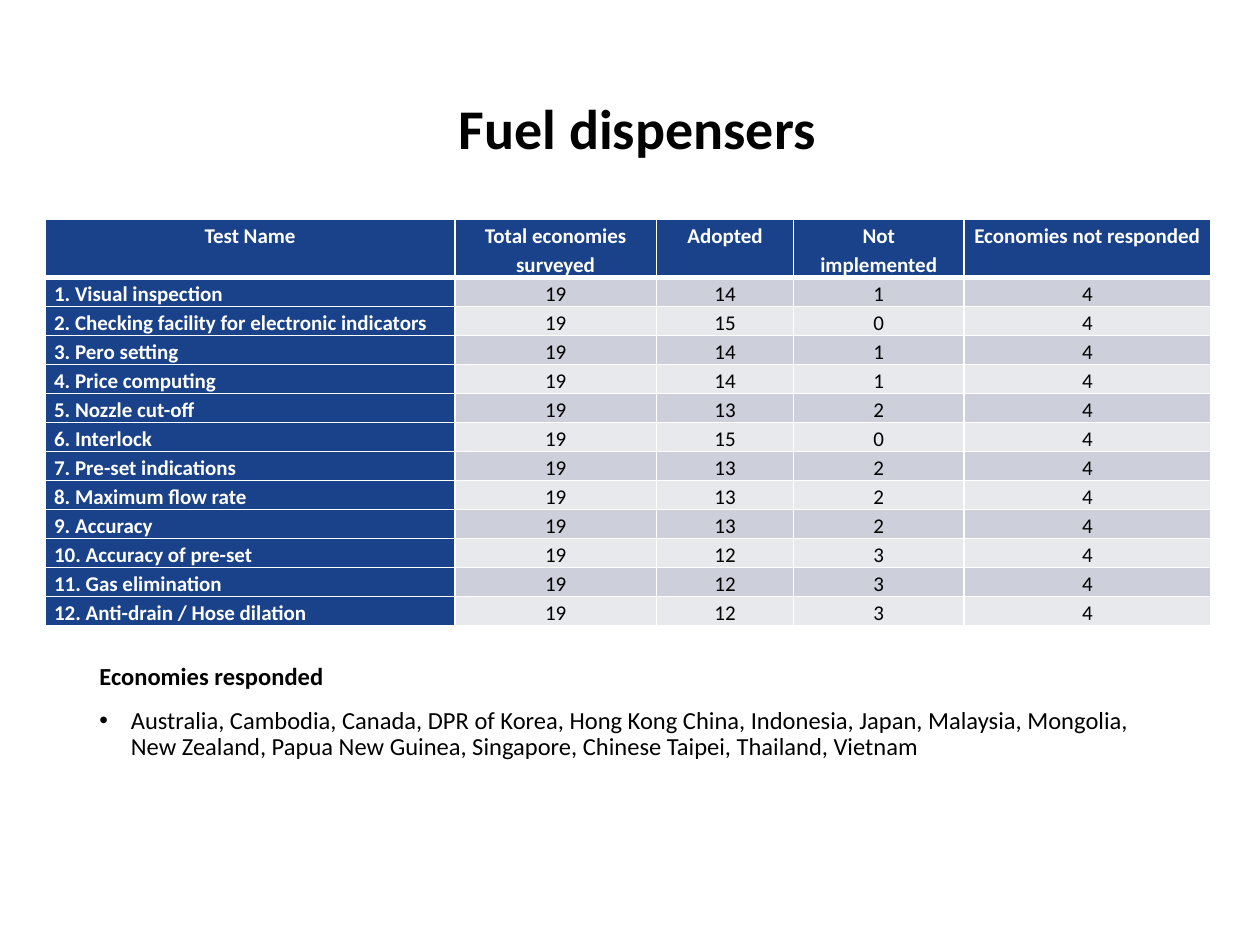
from dataclasses import dataclass

from lxml import etree
from pptx import Presentation
from pptx.dml.color import RGBColor
from pptx.enum.text import MSO_ANCHOR, PP_ALIGN
from pptx.oxml.ns import qn
from pptx.util import Inches, Pt


@dataclass(frozen=True)
class Theme:
    font: str = "Calibri"
    black: str = "000000"
    white: str = "FFFFFF"
    blue: str = "1A428A"
    bands: tuple = ("CDCFDA", "E8E9ED")
    title_size: int = 32
    body_size: int = 14
    table_size: int = 12
    thin_line: int = 1
    thick_line: int = 3


THEME = Theme()

HEADERS = ["Test Name", "Total economies surveyed", "Adopted",
           "Not implemented", "Economies not responded"]
COLUMN_WIDTHS = [3.25, 1.6, 1.09, 1.35, 1.96]
HEADER_HEIGHT, ROW_HEIGHT = 0.41, 0.2
SURVEYED, NOT_RESPONDED = 19, 4

# Test name, adopted, not implemented
TESTS = [
    ("Visual inspection", 14, 1),
    ("Checking facility for electronic indicators", 15, 0),
    ("Pero setting", 14, 1),
    ("Price computing", 14, 1),
    ("Nozzle cut-off", 13, 2),
    ("Interlock", 15, 0),
    ("Pre-set indications", 13, 2),
    ("Maximum flow rate", 13, 2),
    ("Accuracy", 13, 2),
    ("Accuracy of pre-set", 12, 3),
    ("Gas elimination", 12, 3),
    ("Anti-drain / Hose dilation", 12, 3),
]
ECONOMIES = ("Australia, Cambodia, Canada, DPR of Korea, Hong Kong China, "
             "Indonesia, Japan, Malaysia, Mongolia, New Zealand, "
             "Papua New Guinea, Singapore, Chinese Taipei, Thailand, Vietnam")


def style(paragraph, size, color=THEME.black, bold=False, spacing=0.9):
    paragraph.line_spacing = spacing
    font = paragraph.font
    font.name, font.size, font.bold = THEME.font, Pt(size), bold
    font.color.rgb = RGBColor.from_string(color)


def add_text_frame(slide, box):
    frame = slide.shapes.add_textbox(*map(Inches, box)).text_frame
    frame.word_wrap = True
    return frame


def add_title(slide, box):
    frame = add_text_frame(slide, box)
    frame.vertical_anchor = MSO_ANCHOR.MIDDLE
    paragraph = frame.paragraphs[0]
    paragraph.text = "Fuel dispensers"
    paragraph.alignment = PP_ALIGN.CENTER
    style(paragraph, THEME.title_size, bold=True)


def set_borders(cell, top, bottom):
    properties = cell._tc.get_or_add_tcPr()
    widths = {"L": THEME.thin_line, "R": THEME.thin_line, "T": top, "B": bottom}
    for side, width in widths.items():
        line = etree.SubElement(properties, qn(f"a:ln{side}"), w=str(Pt(width)))
        fill = etree.SubElement(line, qn("a:solidFill"))
        etree.SubElement(fill, qn("a:srgbClr"), val=THEME.white)


def fill_cell(cell, text, row, column):
    strong = row == 0 or column == 0
    set_borders(cell,
                top=THEME.thick_line if row == 1 else THEME.thin_line,
                bottom=THEME.thick_line if row == 0 else THEME.thin_line)
    cell.fill.solid()
    color = THEME.blue if strong else THEME.bands[(row - 1) % 2]
    cell.fill.fore_color.rgb = RGBColor.from_string(color)
    cell.margin_left = cell.margin_right = Inches(0.07)
    cell.margin_top = cell.margin_bottom = 0

    paragraph = cell.text_frame.paragraphs[0]
    paragraph.text = str(text)
    name_cell = column == 0 and row > 0
    paragraph.alignment = PP_ALIGN.LEFT if name_cell else PP_ALIGN.CENTER
    style(paragraph, THEME.table_size, THEME.white if strong else THEME.black,
          bold=strong, spacing=1.15)


def add_test_table(slide, box):
    rows = [HEADERS] + [
        [f"{number}. {name}", SURVEYED, adopted, missing, NOT_RESPONDED]
        for number, (name, adopted, missing) in enumerate(TESTS, 1)
    ]
    frame = slide.shapes.add_table(len(rows), len(HEADERS), *map(Inches, box))
    table = frame.table
    table.horz_banding = False
    for column, width in zip(table.columns, COLUMN_WIDTHS):
        column.width = Inches(width)
    for index, row in enumerate(table.rows):
        row.height = Inches(ROW_HEIGHT if index else HEADER_HEIGHT)
    frame.height = Inches(box[3])
    for row, values in enumerate(rows):
        for column, value in enumerate(values):
            fill_cell(table.cell(row, column), value, row, column)


def add_responses(slide, box):
    frame = add_text_frame(slide, box)
    heading = frame.paragraphs[0]
    heading.text = "Economies responded"
    style(heading, THEME.body_size, bold=True)

    item = frame.add_paragraph()
    item.text = ECONOMIES
    properties = item._p.get_or_add_pPr()
    properties.set("marL", str(Inches(0.25)))
    properties.set("indent", str(-Inches(0.25)))
    etree.SubElement(properties, qn("a:buFont"), typeface="Arial")
    etree.SubElement(properties, qn("a:buChar"), char="•")
    item.space_before = Pt(10)
    style(item, THEME.body_size)


def main():
    presentation = Presentation()
    presentation.slide_width = Inches(10)
    presentation.slide_height = Inches(7.5)
    slide = presentation.slides.add_slide(presentation.slide_layouts[6])

    # Boxes are left, top, width, height
    add_title(slide, (0.75, 0.54, 8.62, 1))
    add_responses(slide, (0.69, 5.22, 8.51, 1.2))
    add_test_table(slide, (0.36, 1.74, 9.25, 3.22))

    presentation.save("out.pptx")


if __name__ == "__main__":
    main()
